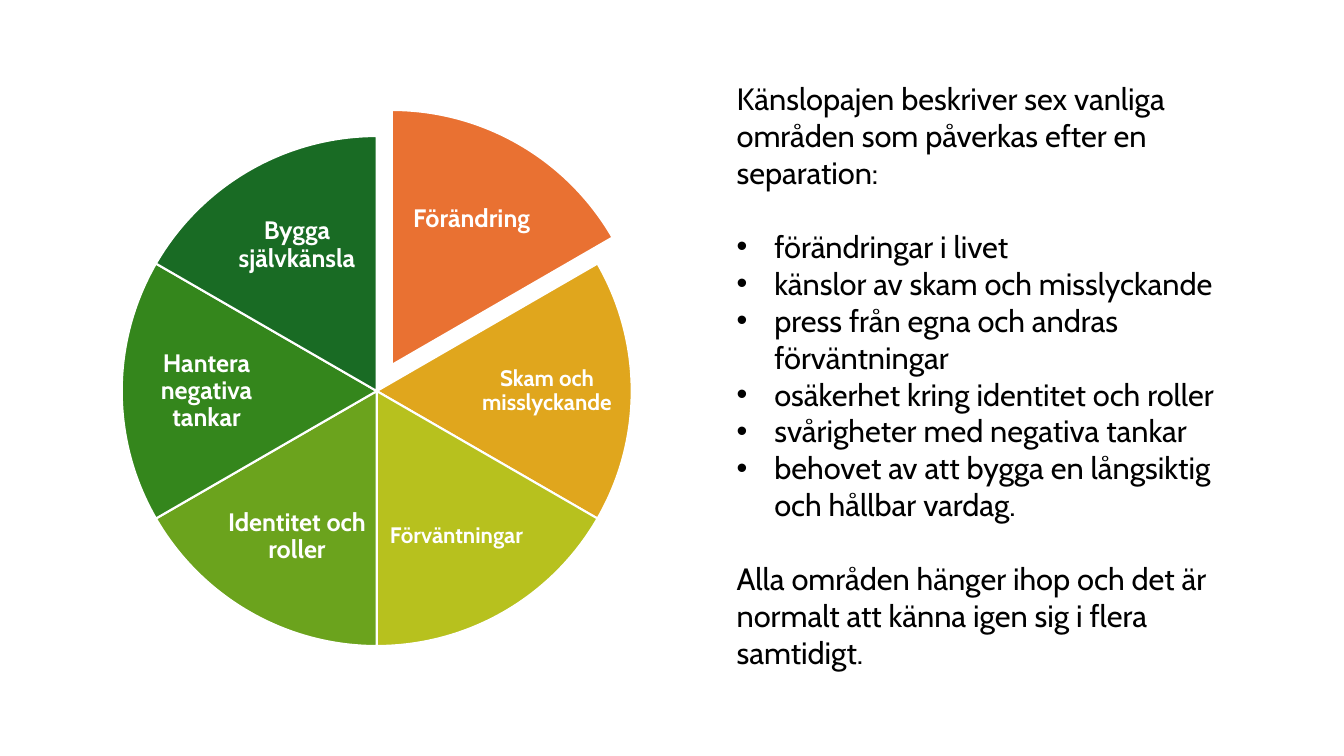
import math

from lxml import etree
from pptx import Presentation
from pptx.dml.color import RGBColor
from pptx.enum import shapes, text
from pptx.oxml import ns
from pptx.util import Cm, Pt

FONT = "Cabin"
COLORS = {
    "orange": "E97132",
    "amber": "E0A61D",
    "lime": "B7C11E",
    "leaf": "6BA31D",
    "green": "34861C",
    "forest": "196B24",
    "white": "FFFFFF",
    "black": "000000",
}
SLICES = [
    ("Förändring", "orange", 18, 0.76),
    ("Skam och misslyckande", "amber", 16, 0),
    ("Förväntningar", "lime", 16, 0),
    ("Identitet och roller", "leaf", 18, 0),
    ("Hantera negativa tankar", "green", 18, 0),
    ("Bygga självkänsla", "forest", 18, 0),
]
INTRO = "Känslopajen beskriver sex vanliga områden som påverkas efter en separation:"
AREAS = [
    "förändringar i livet",
    "känslor av skam och misslyckande",
    "press från egna och andras förväntningar",
    "osäkerhet kring identitet och roller",
    "svårigheter med negativa tankar",
    "behovet av att bygga en långsiktig och hållbar vardag.",
]
CLOSING = "Alla områden hänger ihop och det är normalt att känna igen sig i flera samtidigt."


def color(name):
    return RGBColor.from_string(COLORS[name])


def set_font(paragraph, size, color_name, bold=False):
    font = paragraph.font
    font.name = FONT
    font.size = Pt(size)
    font.bold = bold
    font.color.rgb = color(color_name)


def add_label(container, caption, size, center_x, center_y, width, height):
    box = container.add_textbox(
        Cm(center_x - width / 2), Cm(center_y - height / 2), Cm(width), Cm(height))
    frame = box.text_frame
    frame.word_wrap = True
    frame.vertical_anchor = text.MSO_ANCHOR.MIDDLE
    frame.margin_left = frame.margin_right = Cm(0.06)
    frame.margin_top = frame.margin_bottom = Cm(0.06)
    paragraph = frame.paragraphs[0]
    paragraph.text = caption
    paragraph.alignment = text.PP_ALIGN.CENTER
    paragraph.line_spacing = 0.9
    set_font(paragraph, size, "white", bold=True)


def add_feelings_pie(slide, left, top, diameter):
    container = slide.shapes.add_group_shape().shapes
    step = 360 / len(SLICES)
    for index, (caption, fill, size, pull) in enumerate(SLICES):
        start = (270 + index * step) % 360
        middle = math.radians(start + step / 2)
        slice_left = left + pull * math.cos(middle)
        slice_top = top + pull * math.sin(middle)
        pie = container.add_shape(
            shapes.MSO_SHAPE.PIE, Cm(slice_left), Cm(slice_top), Cm(diameter), Cm(diameter))
        pie.adjustments[0] = start * 0.6
        pie.adjustments[1] = (start + step) % 360 * 0.6
        pie.shadow.inherit = False
        pie.fill.solid()
        pie.fill.fore_color.rgb = color(fill)
        pie.line.color.rgb = color("white")
        pie.line.width = Pt(1.5)

        on_side = abs(math.sin(middle)) < 0.1
        reach_x = 4.29 if on_side else 2.01
        reach_y = 0 if on_side else 3.67
        label_size = (3.89, 2.59) if on_side else (3.76, 2.74)
        add_label(
            container, caption, size,
            slice_left + diameter / 2 + math.copysign(reach_x, math.cos(middle)),
            slice_top + diameter / 2 + math.copysign(reach_y, math.sin(middle)),
            *label_size)


def format_bullet(paragraph, bulleted):
    properties = paragraph._p.get_or_add_pPr()
    indent = Cm(0.95) if bulleted else 0
    properties.set("marL", str(indent))
    properties.set("indent", str(-indent))
    if bulleted:
        etree.SubElement(properties, ns.qn("a:buFont")).set("typeface", "Arial")
        etree.SubElement(properties, ns.qn("a:buChar")).set("char", "•")
    else:
        etree.SubElement(properties, ns.qn("a:buNone"))


def add_description(slide, left, top, width, height):
    body = slide.placeholders[1]
    body.left, body.top, body.width, body.height = Cm(left), Cm(top), Cm(width), Cm(height)
    frame = body.text_frame
    frame.word_wrap = True
    frame.auto_size = text.MSO_AUTO_SIZE.NONE
    frame.vertical_anchor = text.MSO_ANCHOR.TOP
    lines = [INTRO, *AREAS, CLOSING]
    frame.text = "\n".join(lines)
    for paragraph, line in zip(frame.paragraphs, lines):
        format_bullet(paragraph, line in AREAS)
        paragraph.alignment = text.PP_ALIGN.LEFT
        paragraph.space_before = Pt(26.4 if line in (AREAS[0], CLOSING) else 0)
        set_font(paragraph, 22, "black")


def main():
    presentation = Presentation()
    presentation.slide_width = Cm(33.87)
    presentation.slide_height = Cm(19.05)
    slide = presentation.slides.add_slide(presentation.slide_layouts[1])
    title = slide.shapes.title.element
    title.getparent().remove(title)
    add_feelings_pie(slide, left=3.07, top=3.43, diameter=12.85)
    add_description(slide, left=18.31, top=1.88, width=13.06, height=15.29)
    presentation.save("out.pptx")


if __name__ == "__main__":
    main()
